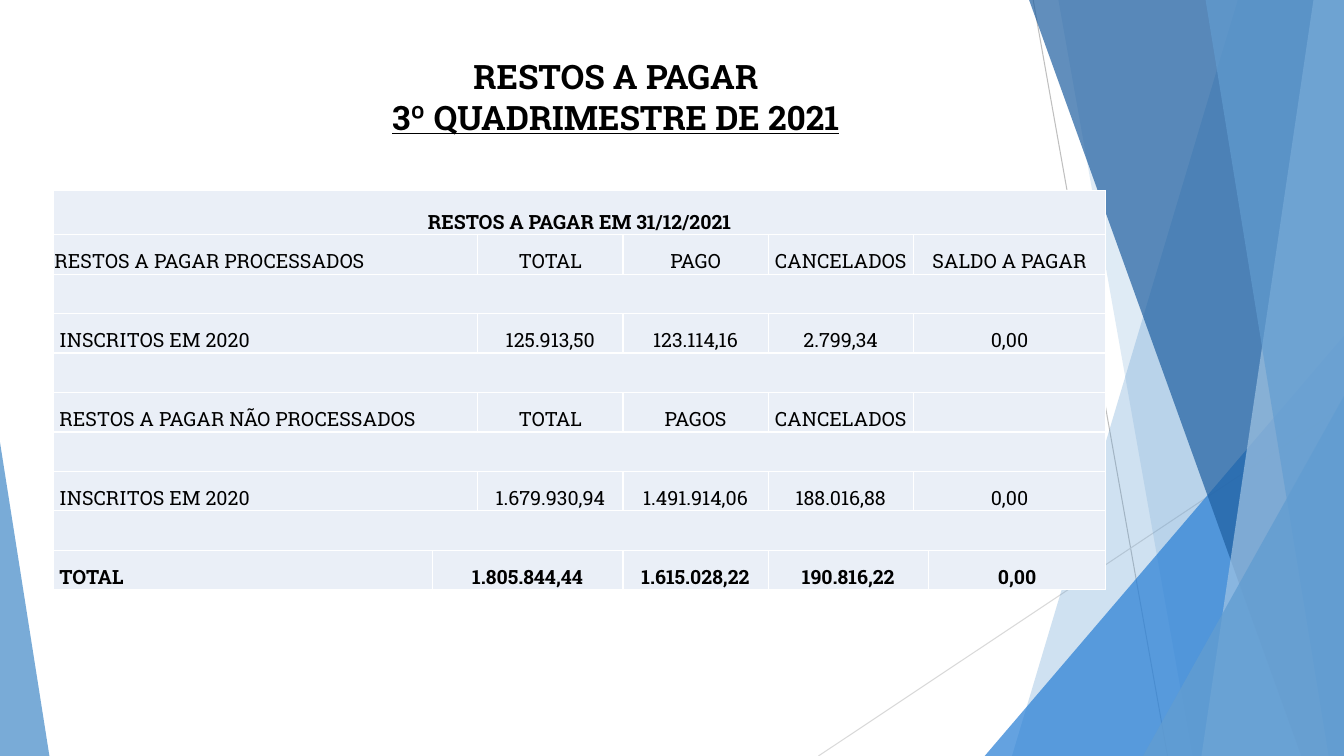
from dataclasses import dataclass

from lxml import etree
from pptx import Presentation
from pptx.dml.color import RGBColor
from pptx.enum import shapes, text
from pptx.oxml import ns
from pptx.util import Pt


@dataclass(frozen=True)
class Theme:
    font: str = "Roboto Slab"
    ink: str = "000000"
    cell: str = "EAEFF7"
    border: str = "FFFFFF"
    ray: str = "BFBFBF"
    pale_ray: str = "D9D9D9"
    sky: str = "629DD1"
    blue: str = "297FD5"
    navy: str = "1F5FA0"
    mist: str = "A1C4E3"
    title_size: int = 24
    table_size: int = 14


THEME = Theme()
WIDTH, HEIGHT = 960, 540

COLUMN_WIDTHS = [270.7, 32.4, 103.7, 103.7, 103.7, 10.8, 126.7]
FULL, DETAIL, SUM = (7,), (2, 1, 1, 1, 2), (1, 2, 1, 2, 1)
BLANK = (FULL, [""])
ROWS = [
    (FULL, ["RESTOS A PAGAR EM 31/12/2021"]),
    (DETAIL, ["RESTOS A PAGAR PROCESSADOS", "TOTAL", "PAGO", "CANCELADOS", "SALDO A PAGAR"]),
    BLANK,
    (DETAIL, ["INSCRITOS EM 2020", "125.913,50", "123.114,16", "2.799,34", "0,00"]),
    BLANK,
    (DETAIL, ["RESTOS A PAGAR NÃO PROCESSADOS", "TOTAL", "PAGOS", "CANCELADOS", ""]),
    BLANK,
    (DETAIL, ["INSCRITOS EM 2020", "1.679.930,94", "1.491.914,06", "188.016,88", "0,00"]),
    BLANK,
    (SUM, ["TOTAL", "1.805.844,44", "1.615.028,22", "190.816,22", "0,00"]),
]


def style_run(run, size, bold):
    run.font.name = THEME.font
    run.font.size = Pt(size)
    run.font.bold = bold
    run.font.color.rgb = RGBColor.from_string(THEME.ink)


def fill_facet(facet, color, opacity):
    """Fill with a see-through colour, without outline or shadow."""
    facet.shadow.inherit = False
    facet.line.fill.background()
    facet.fill.solid()
    facet.fill.fore_color.rgb = RGBColor.from_string(color)
    tint = facet.fill._xPr.find(".//" + ns.qn("a:srgbClr"))
    etree.SubElement(tint, ns.qn("a:alpha"), val=str(opacity * 1000))


def add_ray(slide, start, end, color):
    ray = slide.shapes.add_connector(
        shapes.MSO_CONNECTOR.STRAIGHT, *(Pt(v) for v in (*start, *end)))
    ray.line.color.rgb = RGBColor.from_string(color)
    ray.line.width = Pt(0.75)
    etree.SubElement(ray._element.spPr, ns.qn("a:effectLst"))


def add_band(slide, top_left, bottom_left, color, opacity):
    """A full-height band from a slanted left edge to the slide's right edge."""
    corners = [(WIDTH, 0), (WIDTH, HEIGHT), (bottom_left, HEIGHT)]
    outline = slide.shapes.build_freeform(Pt(top_left), 0)
    outline.add_line_segments([(Pt(x), Pt(y)) for x, y in corners])
    fill_facet(outline.convert_to_shape(), color, opacity)


def add_wedge(slide, left, top, width, apex, color, opacity):
    """A triangle standing on the slide's bottom; apex is 0 (left) or 1 (right)."""
    wedge = slide.shapes.add_shape(
        shapes.MSO_SHAPE.ISOSCELES_TRIANGLE,
        Pt(left), Pt(top), Pt(width), Pt(HEIGHT - top))
    wedge.adjustments[0] = apex
    fill_facet(wedge, color, opacity)


def add_backdrop(slide):
    add_ray(slide, (738, 0), (834, HEIGHT), THEME.ray)
    add_ray(slide, (WIDTH, 290), (584.6, HEIGHT), THEME.pale_ray)
    add_band(slide, 884.2, 722.9, THEME.sky, 30)
    add_band(slide, 756, 851.8, THEME.sky, 20)
    add_wedge(slide, 703.4, 239.8, 256.6, 1, THEME.blue, 72)
    add_band(slide, 735.1, 929.5, THEME.navy, 70)
    add_band(slide, 938.2, 858.2, THEME.mist, 70)
    add_band(slide, 861.1, 949, THEME.sky, 65)
    add_wedge(slide, 816.5, 283, 143.5, 1, THEME.sky, 80)
    add_wedge(slide, 0, 316, 35.3, 0, THEME.sky, 85)


def add_title(slide, left, top, width, height):
    frame = slide.shapes.add_textbox(Pt(left), Pt(top), Pt(width), Pt(height)).text_frame
    frame.word_wrap = True
    frame.vertical_anchor = text.MSO_ANCHOR.TOP
    frame.text = "RESTOS A PAGAR\v3º QUADRIMESTRE DE 2021"
    heading = frame.paragraphs[0]
    heading.alignment = text.PP_ALIGN.CENTER
    for run in heading.runs:
        style_run(run, THEME.title_size, True)
    heading.runs[-1].font.underline = True


def style_cell(cell):
    properties = cell._tc.get_or_add_tcPr()
    for side in ("lnL", "lnR", "lnT", "lnB"):
        edge = etree.SubElement(properties, ns.qn("a:" + side), w=str(Pt(1)))
        paint = etree.SubElement(edge, ns.qn("a:solidFill"))
        etree.SubElement(paint, ns.qn("a:srgbClr"), val=THEME.border)
    cell.fill.solid()
    cell.fill.fore_color.rgb = RGBColor.from_string(THEME.cell)
    cell.vertical_anchor = text.MSO_ANCHOR.BOTTOM
    cell.margin_left = cell.margin_right = cell.margin_top = Pt(0.7)
    cell.margin_bottom = 0


def add_balance_table(slide, left, top, first_height, row_height):
    heights = [first_height] + [row_height] * (len(ROWS) - 1)
    table = slide.shapes.add_table(
        len(ROWS), len(COLUMN_WIDTHS), Pt(left), Pt(top),
        Pt(sum(COLUMN_WIDTHS)), Pt(sum(heights))).table
    table.first_row = table.horz_banding = False
    for column, width in zip(table.columns, COLUMN_WIDTHS):
        column.width = Pt(width)
    for row, height in zip(table.rows, heights):
        row.height = Pt(height)
    for cell in table.iter_cells():
        style_cell(cell)

    for row, (spans, entries) in enumerate(ROWS):
        column = 0
        for span, entry in zip(spans, entries):
            cell = table.cell(row, column)
            if span > 1:
                cell.merge(table.cell(row, column + span - 1))
            cell.text = entry
            paragraph = cell.text_frame.paragraphs[0]
            is_label = column == 0 and spans != FULL
            if not is_label:
                paragraph.alignment = text.PP_ALIGN.CENTER
            elif row > 1:
                cell.margin_left = Pt(4.3)
            for run in paragraph.runs:
                style_run(run, THEME.table_size, spans != DETAIL)
            column += span


def main():
    deck = Presentation()
    deck.slide_width, deck.slide_height = Pt(WIDTH), Pt(HEIGHT)
    slide = deck.slides.add_slide(deck.slide_layouts[6])
    add_backdrop(slide)
    add_title(slide, 109.4, 36.7, 661, 75.6)
    add_balance_table(slide, 38.2, 136.1, 31.6, 28.2)
    deck.save("out.pptx")


if __name__ == "__main__":
    main()
